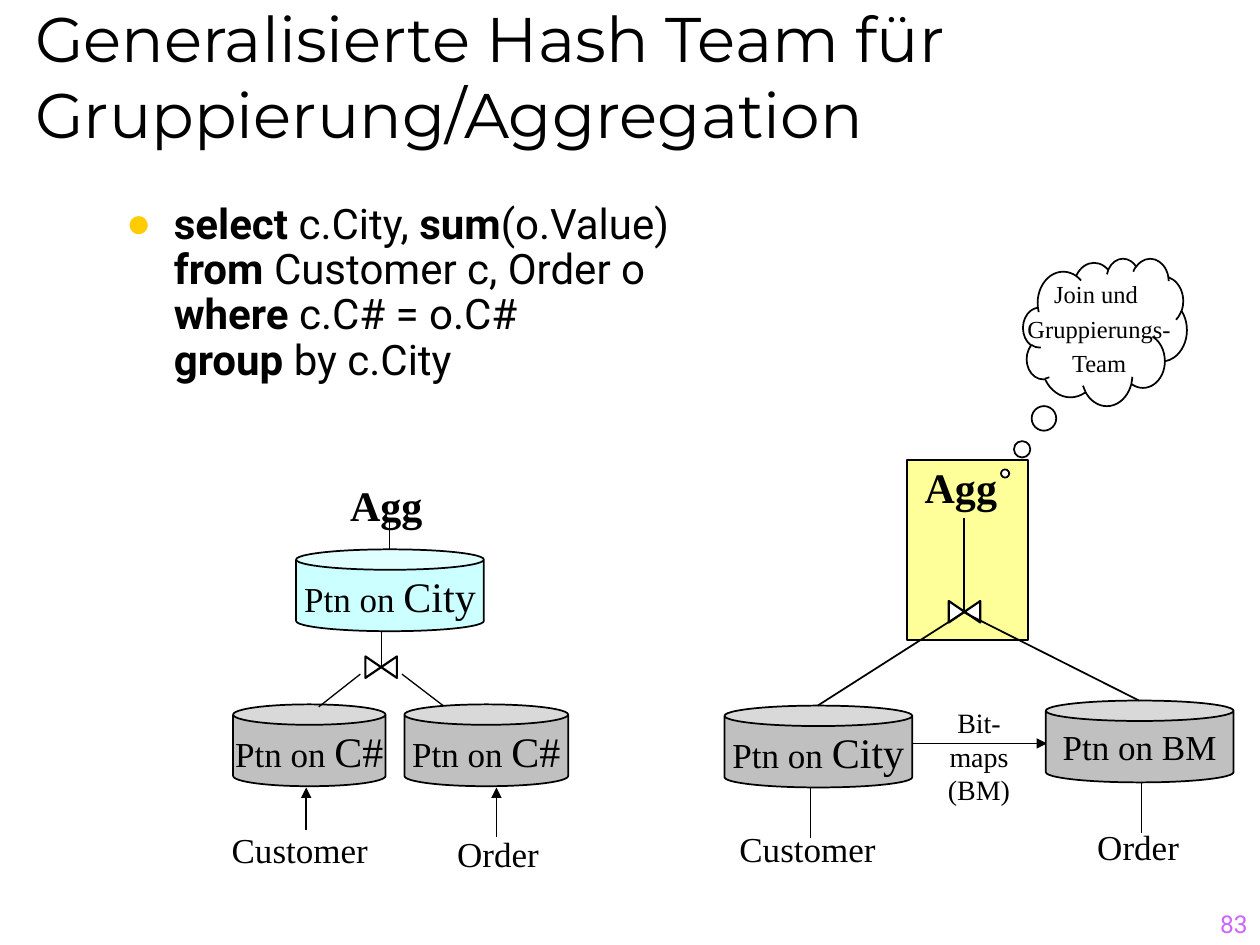
from dataclasses import dataclass

from pptx import Presentation
from pptx.dml.color import RGBColor
from pptx.enum.shapes import MSO_CONNECTOR as Connector, MSO_SHAPE as Shape
from pptx.enum.text import MSO_ANCHOR as Anchor, MSO_AUTO_SIZE as AutoSize, PP_ALIGN as Align
from pptx.oxml.ns import qn
from pptx.util import Inches, Pt
from lxml.etree import SubElement

SERIF, SANS, HEADING = "Times New Roman", "Roboto", "Montserrat"
BLACK, WHITE, GREY, CYAN, YELLOW = "000000", "FFFFFF", "C0C0C0", "CCFFFF", "FFFF99"
COLUMNS, ROWS = 100, 75
CELL = Inches(10) // COLUMNS


@dataclass
class Box:
    """A region of the slide, measured in grid columns and rows."""
    left: float
    top: float
    width: float
    height: float

    def inner(self, left, top, width, height):
        """Return a box placed relative to this one."""
        return Box(self.left + left, self.top + top, width, height)

    def point(self, column, row):
        """Return slide coordinates of a point relative to this box."""
        return round((self.left + column) * CELL), round((self.top + row) * CELL)

    def frame(self):
        """Return left, top, width and height as slide lengths."""
        return [round(v * CELL) for v in (self.left, self.top, self.width, self.height)]


def colour(value):
    """Turn a hex string into a colour."""
    return RGBColor.from_string(value)


def format_run(run, size, font=SERIF, bold=False, ink=BLACK):
    """Set the font of one run."""
    run.font.size, run.font.name, run.font.bold = Pt(size), font, bold
    run.font.color.rgb = colour(ink)


def add_runs(paragraph, pieces, font=SERIF):
    """Fill a paragraph with (text, size, bold) pieces."""
    for text, size, bold in pieces:
        run = paragraph.add_run()
        run.text = text
        format_run(run, size, font, bold)


def add_label(slide, box, text, size, align=Align.LEFT, wrap=True, bold=False):
    """Add a growing text box with one paragraph per line."""
    frame = slide.shapes.add_textbox(*box.frame()).text_frame
    frame.word_wrap, frame.auto_size = wrap, AutoSize.SHAPE_TO_FIT_TEXT
    frame.text = text
    for paragraph in frame.paragraphs:
        paragraph.alignment = align
        format_run(paragraph.runs[0], size, bold=bold)


def add_figure(slide, kind, box, fill, width=1):
    """Add a filled preset shape with a black outline."""
    shape = slide.shapes.add_shape(kind, *box.frame())
    shape.shadow.inherit = False
    shape.fill.solid()
    shape.fill.fore_color.rgb = colour(fill)
    shape.line.color.rgb, shape.line.width = colour(BLACK), Pt(width)
    return shape


def add_partition(slide, box, key, key_size=24, fill=GREY):
    """Add a cylinder that names its partitioning key."""
    frame = add_figure(slide, Shape.CAN, box, fill).text_frame
    frame.word_wrap, frame.vertical_anchor = False, Anchor.MIDDLE
    frame.paragraphs[0].alignment = Align.CENTER
    add_runs(frame.paragraphs[0], [("Ptn on ", 20, False), (key, key_size, False)])


def add_join(slide, box):
    """Add the bow-tie join symbol."""
    add_figure(slide, Shape.FLOWCHART_COLLATE, box, WHITE, 1.25).rotation = 270


def add_line(slide, box, start, end, width=0.75, arrow=False):
    """Connect two points of a box, optionally with an arrowhead at the end."""
    connector = slide.shapes.add_connector(
        Connector.STRAIGHT, *box.point(*start), *box.point(*end))
    connector.line.color.rgb, connector.line.width = colour(BLACK), Pt(width)
    properties = connector._element.spPr
    if arrow:
        SubElement(properties.find(qn("a:ln")), qn("a:tailEnd"), type="triangle")
    SubElement(properties, qn("a:effectLst"))


def place(shape, box):
    """Move a placeholder into a box."""
    shape.left, shape.top, shape.width, shape.height = box.frame()
    shape.text_frame.auto_size = AutoSize.NONE


def fill_title(slide, box):
    """Fill the title placeholder."""
    title = slide.shapes.title
    place(title, box)
    frame = title.text_frame
    frame.text = "Generalisierte Hash Team für Gruppierung/Aggregation"
    frame.vertical_anchor = Anchor.BOTTOM
    frame.paragraphs[0].alignment = Align.LEFT
    format_run(frame.paragraphs[0].runs[0], 36, HEADING)


def fill_query(slide, box):
    """Fill the body placeholder with the bulleted SQL query."""
    body = slide.placeholders[1]
    place(body, box)
    paragraph = body.text_frame.paragraphs[0]
    paragraph.line_spacing, paragraph.space_before = 0.9, Pt(4.8)
    properties = paragraph._p.get_or_add_pPr()
    properties.set("marL", str(Inches(0.38)))
    properties.set("indent", str(-Inches(0.38)))
    SubElement(SubElement(properties, qn("a:buClr")), qn("a:srgbClr"), val="FFCC00")
    SubElement(properties, qn("a:buChar"), char="●")
    lines = [["select", " c.City, ", "sum", "(o.Value)"],
             ["from", " Customer c, Order o"],
             ["where", " c.C# = o.C#"],
             ["group", " by c.City"]]
    for number, words in enumerate(lines):
        if number:
            paragraph.add_line_break()
        add_runs(paragraph, [(word, 24, i % 2 == 0) for i, word in enumerate(words)], SANS)


def draw_classic_plan(slide, box):
    """Draw the plan that partitions again before aggregating."""
    add_label(slide, box.inner(9.4, 0, 8.2, 5), "Agg", 24, bold=True)
    add_label(slide, box.inner(17.9, 28, 11.7, 4.3), "Order", 20)
    add_label(slide, box.inner(0, 27.7, 14.7, 4.3), "Customer", 20)
    add_partition(slide, box.inner(1.1, 18.3, 12.1, 6.5), "C#")
    add_line(slide, box, (7.9, 18.5), (11.2, 15.9))
    add_line(slide, box, (17.9, 18.5), (14.5, 15.9))
    add_join(slide, box.inner(12, 14.1, 1.7, 2.5))
    add_line(slide, box, (12.9, 11.9), (12.9, 15.4))
    add_line(slide, box, (13.5, 3.8), (13.5, 7.1))
    add_partition(slide, box.inner(14.7, 18.3, 13, 6.5), "C#")
    add_line(slide, box, (6.9, 28.3), (6.9, 24.9), 1, True)
    add_line(slide, box, (22, 28.8), (22, 24.9), 1, True)
    add_partition(slide, box.inner(6.1, 6, 14.9, 6.5), "City", fill=CYAN)


def draw_team_plan(slide, box):
    """Draw the plan whose join and aggregation form one team."""
    add_figure(slide, Shape.RECTANGLE, box.inner(14.5, 0, 9.6, 14.3), YELLOW)
    add_line(slide, box, (6.8, 25.9), (6.8, 30))
    add_line(slide, box, (33.1, 25.4), (33.1, 29.6))
    add_join(slide, box.inner(18.2, 10.8, 1.7, 2.5))
    add_line(slide, box, (12.7, 22.5), (25.6, 22.5), arrow=True)
    add_label(slide, box.inner(16.7, 19, 7, 9), "Bit-\nmaps\n(BM)", 16, Align.CENTER, False)
    add_label(slide, box.inner(28.6, 28.5, 11.5, 4.3), "Order", 20)
    add_label(slide, box.inner(0.2, 28.7, 14.7, 4.3), "Customer", 20)
    add_partition(slide, box.inner(0, 19.5, 14.9, 6.5), "City")
    add_partition(slide, box.inner(25.5, 19.1, 14.9, 6.5), "BM", 20)
    add_label(slide, box.inner(14.9, -0.4, 8.2, 5), "Agg", 24, bold=True)
    join = (19, 12.1)
    add_line(slide, box, (7.4, 19.5), join, 1)
    add_line(slide, box, (32.9, 19.1), join, 1)
    add_line(slide, box, join, (19, 4.6), 1)


def draw_thought(slide, box):
    """Draw the thought bubble that names the team."""
    cloud = add_figure(slide, Shape.CLOUD_CALLOUT, box, WHITE)
    cloud.adjustments[0], cloud.adjustments[1] = -0.61, 0.96
    frame = cloud.text_frame
    frame.margin_left = frame.margin_right = 0
    frame.word_wrap, frame.vertical_anchor = False, Anchor.MIDDLE
    frame.text = "Join und \nGruppierungs-\nTeam"
    for paragraph in frame.paragraphs:
        paragraph.alignment, paragraph.space_before = Align.CENTER, Pt(2.8)
        format_run(paragraph.runs[0], 14)


def add_page_number(slide, box):
    """Add the page number at the bottom right."""
    frame = slide.shapes.add_textbox(*box.frame()).text_frame
    frame.word_wrap, frame.vertical_anchor = True, Anchor.BOTTOM
    frame.text = "83"
    frame.paragraphs[0].alignment = Align.RIGHT
    format_run(frame.paragraphs[0].runs[0], 14, SANS, ink="CC66FF")


def main():
    """Build the slide and save it."""
    presentation = Presentation()
    presentation.slide_width, presentation.slide_height = COLUMNS * CELL, ROWS * CELL
    slide = presentation.slides.add_slide(presentation.slide_layouts[1])
    add_page_number(slide, Box(79.2, 70, 20.8, 5))
    fill_title(slide, Box(1.8, 0, 93, 12.5))
    fill_query(slide, Box(9, 15.6, 85, 46.7))
    draw_classic_plan(slide, Box(17.4, 37.6, 29.6, 32.3))
    draw_team_plan(slide, Box(57.5, 36.5, 40.4, 33))
    draw_thought(slide, Box(81.2, 20.5, 13, 11.7))
    presentation.save("out.pptx")


if __name__ == "__main__":
    main()
